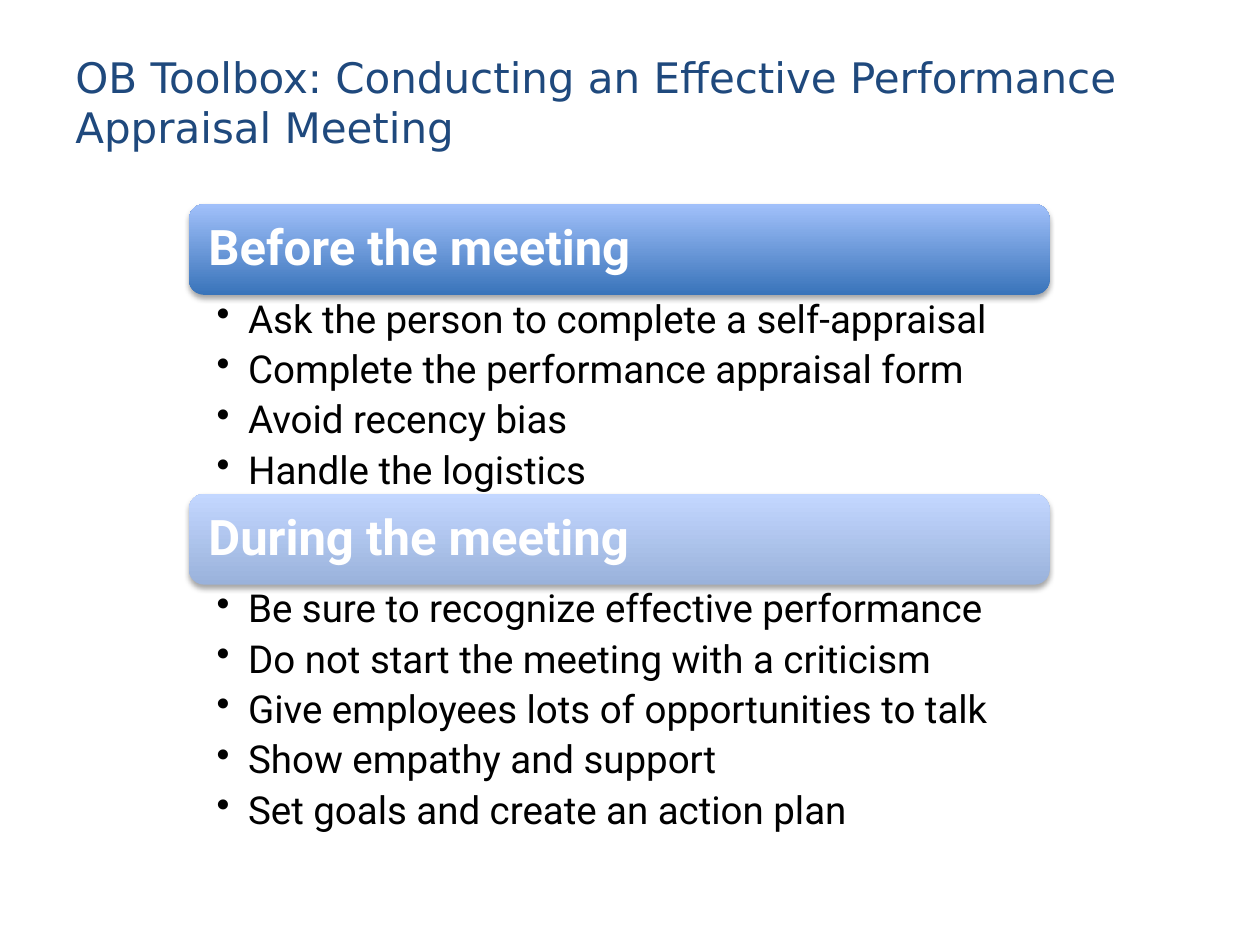
from lxml import etree
from pptx import Presentation
from pptx import util as u
from pptx.dml.color import RGBColor
from pptx.enum import shapes, text
from pptx.oxml import ns

Inches = u.Inches
NAVY = RGBColor(0x1F, 0x49, 0x7D)
WHITE = RGBColor(0xFF, 0xFF, 0xFF)
BLACK = RGBColor(0x00, 0x00, 0x00)
STRONG_BLUE = (RGBColor(0x39, 0x74, 0xBA), RGBColor(0xA1, 0xC0, 0xFA))
PALE_BLUE = (RGBColor(0x9A, 0xB2, 0xDB), RGBColor(0xC3, 0xD7, 0xFF))

TITLE = {"name": "DejaVu Sans", "size": u.Pt(24), "color": NAVY}
HEADING = {"name": "Roboto", "size": u.Pt(28), "bold": True, "color": WHITE}
BULLET = {"name": "Roboto", "size": u.Pt(22), "color": BLACK}

LEFT, WIDTH, BAR_HEIGHT = 1.5, 6.83, 0.72
SECTIONS = [
    ("Before the meeting", STRONG_BLUE, 1.62, 1.58, [
        "Ask the person to complete a self-appraisal",
        "Complete the performance appraisal form",
        "Avoid recency bias",
        "Handle the logistics",
    ]),
    ("During the meeting", PALE_BLUE, 3.92, 1.96, [
        "Be sure to recognize effective performance",
        "Do not start the meeting with a criticism",
        "Give employees lots of opportunities to talk",
        "Show empathy and support",
        "Set goals and create an action plan",
    ]),
]


def format_font(font, style):
    """Apply a dict of font values."""
    for name, value in style.items():
        if name == "color":
            font.color.rgb = value
        else:
            setattr(font, name, value)


def add_bullet(para):
    """Give a paragraph a hanging round bullet."""
    properties = para._p.get_or_add_pPr()
    properties.set("marL", str(Inches(0.25)))
    properties.set("indent", str(-Inches(0.25)))
    etree.SubElement(properties, ns.qn("a:buChar"), char="•")


def add_text(page, box, lines, style, insets=(0.1, 0.05), anchor="MIDDLE",
             spacing=None, after=0, bullets=False):
    """Place lines of text in a box."""
    frame = page.shapes.add_textbox(*map(Inches, box)).text_frame
    across, down = map(Inches, insets)
    layout = {
        "word_wrap": True,
        "vertical_anchor": text.MSO_ANCHOR[anchor],
        "margin_left": across, "margin_right": across,
        "margin_top": down, "margin_bottom": down,
    }
    for name, value in layout.items():
        setattr(frame, name, value)
    for index, line in enumerate(lines):
        para = frame.add_paragraph() if index else frame.paragraphs[0]
        if bullets:
            add_bullet(para)
        para.line_spacing = spacing
        para.space_after = u.Pt(after)
        span = para.add_run()
        span.text = line
        format_font(span.font, style)


def add_shadow(shape):
    """Drop a soft shadow below a shape."""
    shape.shadow.inherit = False
    effects = shape._element.spPr.find(ns.qn("a:effectLst"))
    shadow = etree.SubElement(
        effects, ns.qn("a:outerShdw"), blurRad=str(u.Pt(3.1)),
        dist=str(u.Pt(1.8)), dir="5400000", rotWithShape="0")
    color = etree.SubElement(shadow, ns.qn("a:srgbClr"), val="000000")
    etree.SubElement(color, ns.qn("a:alpha"), val="35000")


def add_bar(page, box, heading, colors):
    """Draw a gradient bar with its heading."""
    bar = page.shapes.add_shape(
        shapes.MSO_SHAPE.ROUNDED_RECTANGLE, *map(Inches, box))
    bar.fill.gradient()
    bar.fill.gradient_angle = 90
    for stop, position, color in zip(bar.fill.gradient_stops, (0, 1), colors):
        stop.position = position
        stop.color.rgb = color
    bar.line.fill.background()
    add_shadow(bar)
    left, top, width, height = box
    pad = 0.035
    inner = (left + pad, top + pad, width - 2 * pad, height - 2 * pad)
    add_text(page, inner, [heading], HEADING, (0.12, 0.12), spacing=0.9)


def add_section(page, box, heading, colors, points):
    """Stack a heading bar and its bullet list."""
    left, top, width, height = box
    add_bar(page, (left, top, width, BAR_HEIGHT), heading, colors)
    body = (left, top + BAR_HEIGHT, width, height - BAR_HEIGHT)
    add_text(page, body, points, BULLET, (0.22, 0.04), "TOP",
             spacing=0.9, after=5, bullets=True)


def main():
    """Build the slide and save the deck."""
    deck = Presentation()
    deck.slide_width, deck.slide_height = Inches(10), Inches(7.5)
    page = deck.slides.add_slide(deck.slide_layouts[6])
    add_text(page, (0.5, 0.18, 9, 1.25), [
        "OB Toolbox: Conducting an Effective Performance Appraisal Meeting",
    ], TITLE)
    for heading, colors, top, list_height, points in SECTIONS:
        box = (LEFT, top, WIDTH, BAR_HEIGHT + list_height)
        add_section(page, box, heading, colors, points)
    deck.save("out.pptx")


if __name__ == "__main__":
    main()
